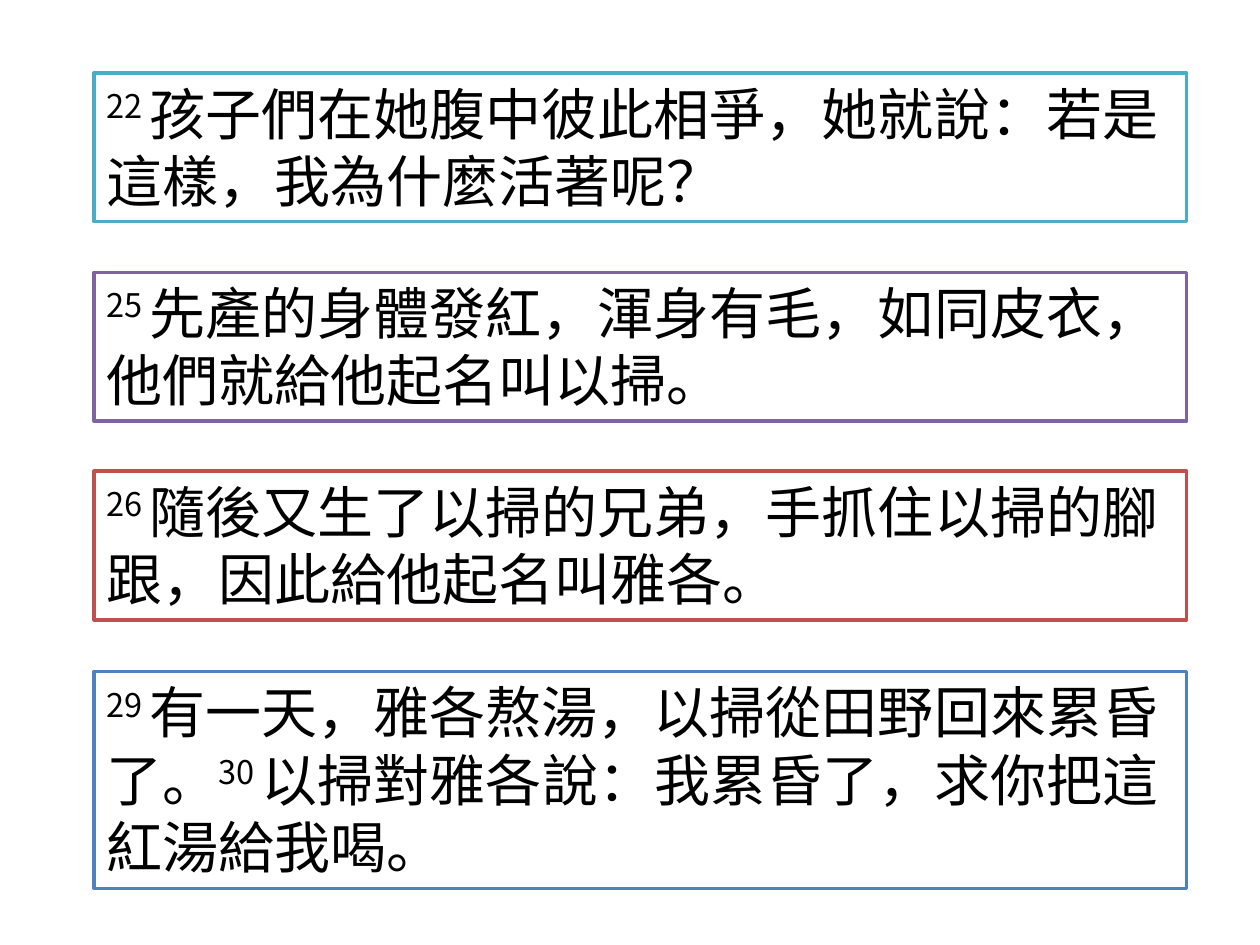
"""Build a slide of four framed scripture passages."""
from dataclasses import dataclass

import pptx
import pptx.dml.color
import pptx.enum.shapes
import pptx.enum.text
import pptx.oxml
import pptx.oxml.ns
import pptx.slide
import pptx.text.text
import pptx.util
from pptx.util import Cm

FONT = "Noto Sans CJK TC"
LEFT = 1.9
WIDTH = 22.02


@dataclass
class Verse:
    number: str
    words: str


@dataclass
class Passage:
    top: float
    height: float
    border: str
    verses: list[Verse]


PASSAGES = [
    Passage(1.47, 3.0, "4BACC6", [
        Verse("22", "孩子們在她腹中彼此相爭，她就說：若是這樣，我為什麼活著呢？")]),
    Passage(5.49, 3.0, "8064A2", [
        Verse("25", "先產的身體發紅，渾身有毛，如同皮衣，他們就給他起名叫以掃。")]),
    Passage(9.5, 3.0, "C0504D", [
        Verse("26", "隨後又生了以掃的兄弟，手抓住以掃的腳跟，因此給他起名叫雅各。")]),
    Passage(13.54, 4.37, "4F81BD", [
        Verse("29", "有一天，雅各熬湯，以掃從田野回來累昏了。"),
        Verse("30", "以掃對雅各說：我累昏了，求你把這紅湯給我喝。")]),
]


def color(value: str) -> pptx.dml.color.RGBColor:
    return pptx.dml.color.RGBColor.from_string(value)


def add_run(paragraph: pptx.text.text._Paragraph, text: str, raised: bool = False) -> None:
    run = paragraph.add_run()
    run.text = text
    run.font.size = pptx.util.Pt(32)
    run.font.name = FONT
    run.font.color.rgb = color("000000")
    properties = run._r.get_or_add_rPr()
    properties.set("baseline", "30000" if raised else "0")
    east_asian = pptx.oxml.parse_xml(
        f'<a:ea {pptx.oxml.ns.nsdecls("a")} typeface="{FONT}"/>')
    properties.find(pptx.oxml.ns.qn("a:latin")).addnext(east_asian)


def add_passage(slide: pptx.slide.Slide, passage: Passage) -> None:
    shape = slide.shapes.add_shape(
        pptx.enum.shapes.MSO_SHAPE.RECTANGLE,
        Cm(LEFT), Cm(passage.top), Cm(WIDTH), Cm(passage.height))
    shape.shadow.inherit = False
    shape.fill.solid()
    shape.fill.fore_color.rgb = color("FFFFFF")
    shape.line.color.rgb = color(passage.border)
    shape.line.width = pptx.util.Pt(2)
    text_frame = shape.text_frame
    text_frame.word_wrap = True
    text_frame.auto_size = pptx.enum.text.MSO_AUTO_SIZE.SHAPE_TO_FIT_TEXT
    text_frame.vertical_anchor = pptx.enum.text.MSO_ANCHOR.TOP
    paragraph = text_frame.paragraphs[0]
    paragraph.alignment = pptx.enum.text.PP_ALIGN.LEFT
    for verse in passage.verses:
        add_run(paragraph, f"{verse.number} ", raised=True)
        add_run(paragraph, verse.words)


def main() -> None:
    presentation = pptx.Presentation()
    presentation.slide_width = Cm(25.4)
    presentation.slide_height = Cm(19.05)
    slide = presentation.slides.add_slide(presentation.slide_layouts[6])
    for passage in PASSAGES:
        add_passage(slide, passage)
    presentation.save("out.pptx")


if __name__ == "__main__":
    main()
